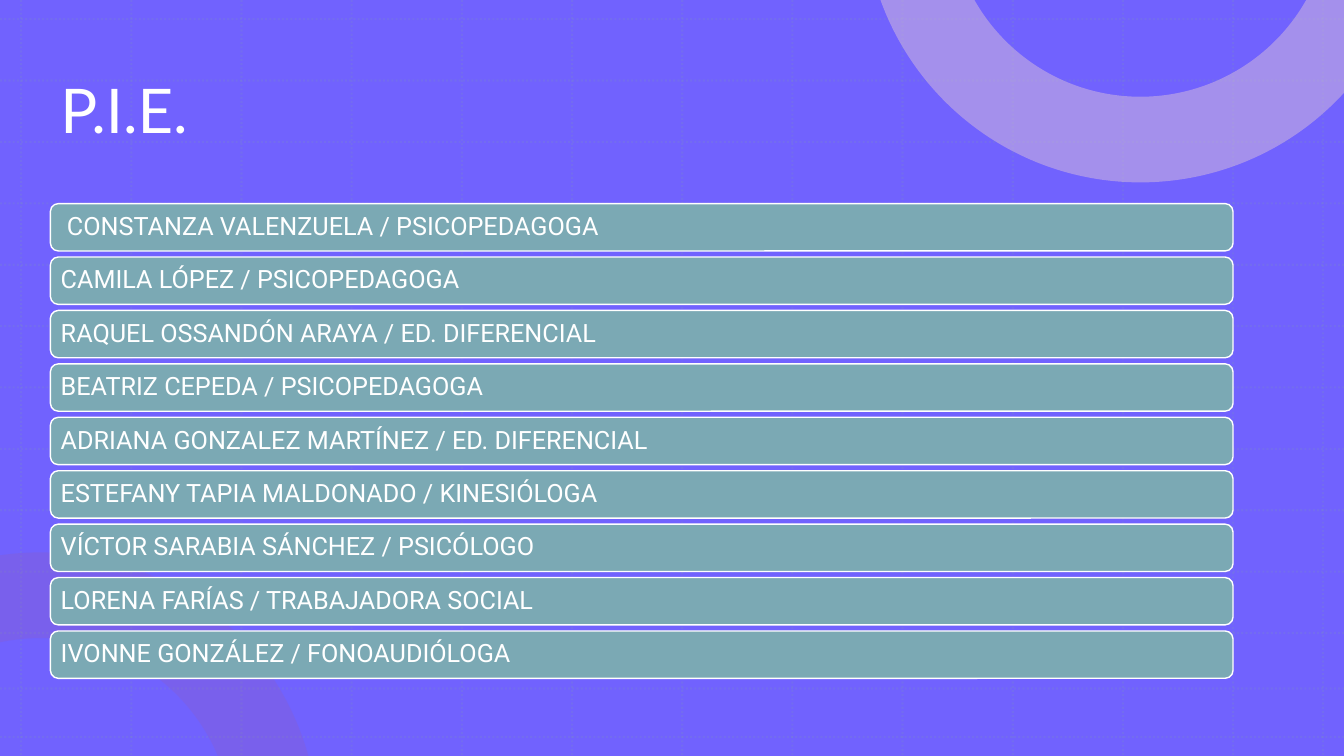
import math
from dataclasses import dataclass

from lxml import etree
from pptx import Presentation
from pptx.dml.color import RGBColor
from pptx.enum import dml, shapes, text
from pptx.oxml import ns
from pptx.util import Inches, Pt

WIDTH, HEIGHT = 13.33, 7.5
WHITE = "FFFFFF"
LEFT, BAR_WIDTH = 0.5, 11.73
FIRST_BAR, BAR_HEIGHT, BAR_STEP = 2.02, 0.47, 0.53

COLUMNS = [0.21 + i * (12.23 - 0.21) / 11 for i in range(12)] + [13.12]
ROWS = [0.19 + i * (6.28 - 0.19) / 10 for i in range(11)] + [6.83, 7.31]

STAFF = [
    " CONSTANZA VALENZUELA / PSICOPEDAGOGA",
    "CAMILA LÓPEZ / PSICOPEDAGOGA",
    "RAQUEL OSSANDÓN ARAYA / ED. DIFERENCIAL",
    "BEATRIZ CEPEDA / PSICOPEDAGOGA",
    "ADRIANA GONZALEZ MARTÍNEZ / ED. DIFERENCIAL",
    "ESTEFANY TAPIA MALDONADO / KINESIÓLOGA",
    "VÍCTOR SARABIA SÁNCHEZ / PSICÓLOGO",
    "LORENA FARÍAS / TRABAJADORA SOCIAL",
    "IVONNE GONZÁLEZ / FONOAUDIÓLOGA",
]


@dataclass
class Arc:
    radius: float
    start: float
    end: float


@dataclass
class Ring:
    """The part of a ring inside the page; corners join its two arcs."""
    x: float
    y: float
    outer: Arc
    peak: float
    inner: Arc
    color: str
    opacity: int
    corners: tuple = ()

    def point(self, radius: float, angle: float) -> tuple[float, float]:
        turn = math.radians(angle)
        return self.x + radius * math.cos(turn), self.y + radius * math.sin(turn)


RINGS = [
    Ring(0.4, 8.24, Arc(2.76, -98.3, -15.55), -90, Arc(1.91, -22.8, -102.1),
         "9C5CA7", 20),
    Ring(11.31, -0.93, Arc(2.74, 160.1, 42.5), 90, Arc(1.89, 29.5, 150.5),
         "D8BFDC", 50, ((WIDTH, 0),)),
]


def paint(fill, color: str, opacity: int = 100) -> None:
    fill.solid()
    fill.fore_color.rgb = RGBColor.from_string(color)
    if opacity < 100:
        tint = fill._xPr.find(".//" + ns.qn("a:srgbClr"))
        etree.SubElement(tint, ns.qn("a:alpha"), val=str(opacity * 1000))


def add_backdrop(page) -> None:
    backdrop = page.shapes.add_shape(
        shapes.MSO_SHAPE.RECTANGLE, 0, 0, Inches(WIDTH), Inches(HEIGHT))
    backdrop.shadow.inherit = False
    paint(backdrop.fill, "7162FE")
    backdrop.line.fill.background()


def add_grid_line(page, x1: float, y1: float, x2: float, y2: float) -> None:
    line = page.shapes.add_connector(
        shapes.MSO_CONNECTOR.STRAIGHT, Inches(x1), Inches(y1), Inches(x2), Inches(y2))
    paint(line.line.fill, "7F96BA", 20)
    line.line.width = Pt(1.5)
    line.line.dash_style = dml.MSO_LINE.ROUND_DOT
    etree.SubElement(line._element.spPr, ns.qn("a:effectLst"))


def bend(segment, arc: Arc) -> None:
    """Turn a straight segment of an outline into an arc."""
    radius = str(Inches(arc.radius))
    curve = etree.Element(
        ns.qn("a:arcTo"), wR=radius, hR=radius,
        stAng=str(round(arc.start % 360 * 60000)),
        swAng=str(round((arc.end - arc.start) * 60000)))
    segment.getparent().replace(segment, curve)


def add_ring(page, ring: Ring) -> None:
    outer, inner = ring.outer, ring.inner
    outline = [ring.point(outer.radius, angle)
               for angle in (outer.start, ring.peak, outer.end)]
    outline += ring.corners
    outline += [ring.point(inner.radius, angle) for angle in (inner.start, inner.end)]
    points = [(Inches(x), Inches(y)) for x, y in outline]
    builder = page.shapes.build_freeform(*points[0])
    builder.add_line_segments(points[1:], close=True)
    band = builder.convert_to_shape()
    segments = band._element.findall(".//" + ns.qn("a:lnTo"))
    bend(segments[0], Arc(outer.radius, outer.start, ring.peak))
    bend(segments[1], Arc(outer.radius, ring.peak, outer.end))
    bend(segments[len(points) - 2], inner)
    band.shadow.inherit = False
    paint(band.fill, ring.color, ring.opacity)
    band.line.fill.background()


def move_to_layout(page, decorations: list) -> None:
    """Place decorations on the layout, behind everything on the page."""
    tree = page.slide_layout.shapes._spTree
    for position, decoration in enumerate(decorations, start=2):
        tree.insert(position, decoration._element)


def write(box, wording: str, font: str, size: int) -> None:
    frame = box.text_frame
    frame.word_wrap = True
    frame.vertical_anchor = text.MSO_ANCHOR.MIDDLE
    para = frame.paragraphs[0]
    para.alignment = text.PP_ALIGN.LEFT
    para.line_spacing = 0.9
    span = para.add_run()
    span.text = wording
    span.font.name = font
    span.font.size = Pt(size)
    paint(span.font.fill, WHITE)


def add_title(page, wording: str) -> None:
    title = page.shapes.title
    title.left, title.top = Inches(LEFT), Inches(0.4)
    title.width, title.height = Inches(BAR_WIDTH), Inches(1.45)
    write(title, wording, "Lato", 44)


def add_bar(page, top: float, wording: str) -> None:
    bar = page.shapes.add_shape(
        shapes.MSO_SHAPE.ROUNDED_RECTANGLE,
        Inches(LEFT), Inches(top), Inches(BAR_WIDTH), Inches(BAR_HEIGHT))
    bar.shadow.inherit = False
    paint(bar.fill, "7BA9B4")
    paint(bar.line.fill, WHITE)
    bar.line.width = Pt(1)
    frame = bar.text_frame
    frame.margin_left = frame.margin_right = Inches(0.08)
    frame.margin_top = frame.margin_bottom = Inches(0.07)
    write(bar, wording, "Roboto", 18)


def main() -> None:
    deck = Presentation()
    deck.slide_width, deck.slide_height = Inches(WIDTH), Inches(HEIGHT)
    page = deck.slides.add_slide(deck.slide_layouts.get_by_name("Title Only"))
    add_backdrop(page)
    for x in COLUMNS:
        add_grid_line(page, x, 0, x, HEIGHT)
    for y in ROWS:
        add_grid_line(page, 0, y, WIDTH, y)
    for ring in RINGS:
        add_ring(page, ring)
    move_to_layout(page, [shape for shape in page.shapes if not shape.is_placeholder])
    add_title(page, "P.I.E.")
    for i, member in enumerate(STAFF):
        add_bar(page, FIRST_BAR + i * BAR_STEP, member)
    deck.save("out.pptx")


if __name__ == "__main__":
    main()
